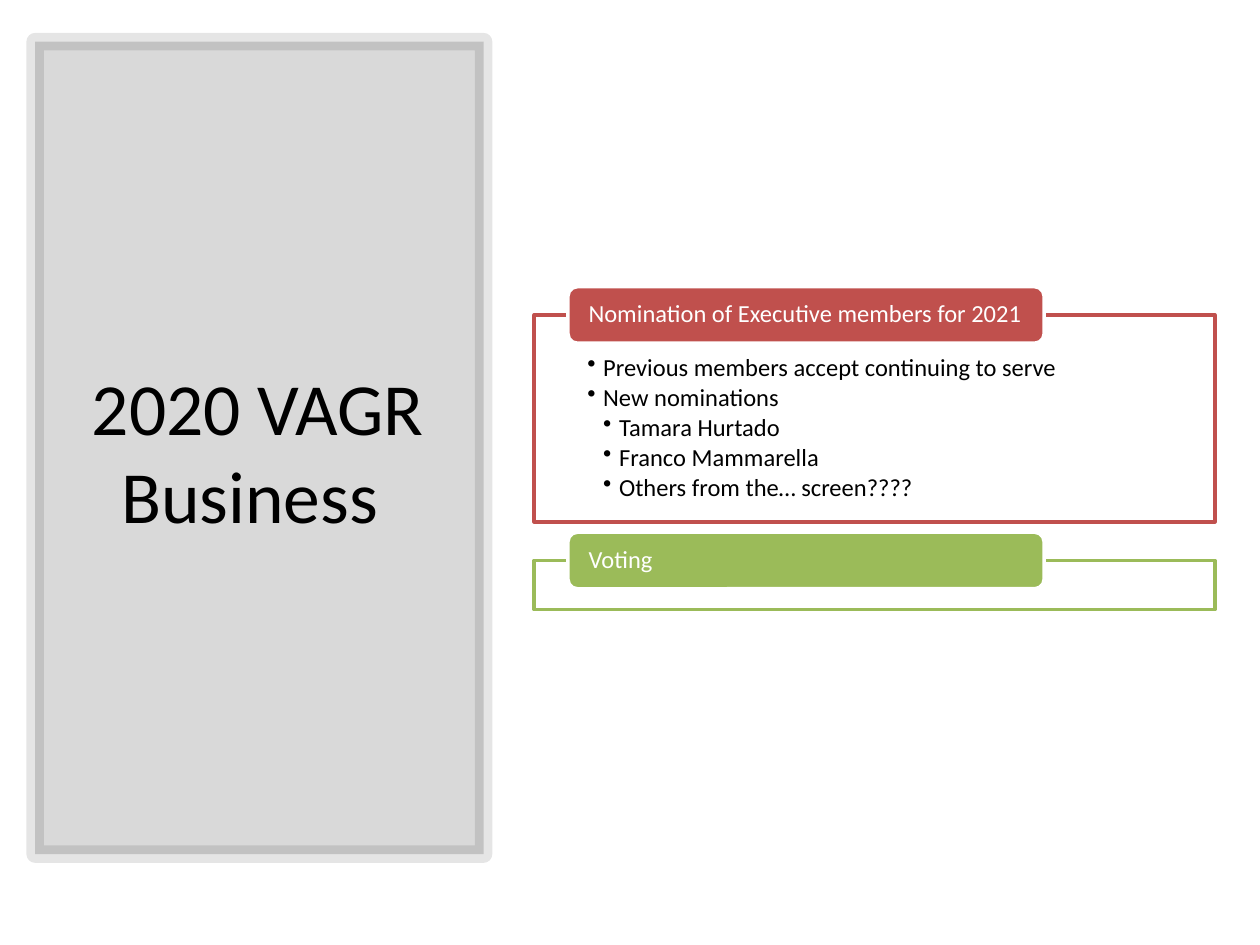
"""Build a slide with a title panel and two tabbed agenda boxes."""
import pptx
import pptx.dml.color
import pptx.enum.shapes
import pptx.enum.text
import pptx.oxml.xmlchemy
import pptx.util
from lxml import etree
from pptx.oxml.ns import qn

Cm = pptx.util.Cm
Pt = pptx.util.Pt
RGBColor = pptx.dml.color.RGBColor
SHAPE = pptx.enum.shapes.MSO_SHAPE
ALIGN = pptx.enum.text.PP_ALIGN
ANCHOR = pptx.enum.text.MSO_ANCHOR

BLACK = RGBColor(0x00, 0x00, 0x00)
WHITE = RGBColor(0xFF, 0xFF, 0xFF)
RED = RGBColor(0xC0, 0x50, 0x4D)
GREEN = RGBColor(0x9B, 0xBB, 0x59)

AGENDA = [
    ("Nomination of Executive members for 2021", RED, 4.17, [
        ("Previous members accept continuing to serve", 1),
        ("New nominations", 1),
        ("Tamara Hurtado", 2),
        ("Franco Mammarella", 2),
        ("Others from the… screen????", 2),
    ]),
    ("Voting", GREEN, 0.99, []),
]


def set_alpha(fill_parent, percent):
    color = fill_parent.find(qn("a:solidFill"))[0]
    etree.SubElement(color, qn("a:alpha")).set("val", str(percent * 1000))


def add_text(tf, text, *, font="Calibri", size=14, color=BLACK, align=ALIGN.LEFT,
             spacing=None, after=0, bullet_level=0):
    p = tf.paragraphs[0] if not tf.text else tf.add_paragraph()
    p.alignment = align
    p.line_spacing = spacing
    p.space_after = Pt(after)
    if bullet_level:
        p.level = bullet_level
        pPr = p._p.get_or_add_pPr()
        pPr.set("marL", str(Cm(0.32 * bullet_level)))
        pPr.set("indent", str(-Cm(0.32)))
        etree.SubElement(pPr, qn("a:buChar")).set("char", "•")
    r = p.add_run()
    r.text = text
    r.font.name = font
    r.font.size = Pt(size)
    r.font.color.rgb = color


class SlideBuilder:
    """Hold the slide and its style, with a method for each kind of element."""

    frame_left, frame_width = 10.77, 13.72
    tab_left, tab_width, tab_height = 11.45, 9.6, 1.14

    def __init__(self, slide):
        self.slide = slide

    def box(self, kind, left, top, width, height, fill, line, weight):
        sp = self.slide.shapes.add_shape(
            kind, Cm(left), Cm(top), Cm(width), Cm(height))
        sp.shadow.inherit = False
        sp.fill.solid()
        sp.fill.fore_color.rgb = fill
        sp.line.color.rgb = line
        sp.line.width = Pt(weight)
        return sp

    def text_area(self, sp, insets, anchor):
        tf = sp.text_frame
        tf.word_wrap = True
        tf.vertical_anchor = anchor
        (tf.margin_left, tf.margin_top,
         tf.margin_right, tf.margin_bottom) = map(Cm, insets)
        return tf

    def panel(self, left, top, width, height):
        sp = self.box(SHAPE.RECTANGLE, left, top, width, height, BLACK, BLACK, 10)
        set_alpha(sp._element.spPr, 15)
        ln = sp.line._get_or_add_ln()
        set_alpha(ln, 10)
        etree.SubElement(ln, qn("a:round"))

    def title(self, text, left, top, width, height):
        sp = self.slide.shapes.add_textbox(Cm(left), Cm(top), Cm(width), Cm(height))
        tf = self.text_area(sp, (0.25, 0.13, 0.25, 0.13), ANCHOR.MIDDLE)
        add_text(tf, text, size=42, align=ALIGN.CENTER)

    def frame(self, top, height, color, items):
        sp = self.box(SHAPE.RECTANGLE, self.frame_left, top, self.frame_width,
                      height, WHITE, color, 2)
        set_alpha(sp._element.spPr, 90)
        tf = self.text_area(sp, (1.07, 0.81, 1.07, 0.28), ANCHOR.TOP)
        for text, level in items:
            add_text(tf, text, spacing=0.9, after=2, bullet_level=level)

    def tab(self, text, frame_top, color):
        sp = self.box(SHAPE.ROUNDED_RECTANGLE, self.tab_left,
                      frame_top - self.tab_height / 2, self.tab_width,
                      self.tab_height, color, WHITE, 2)
        tf = self.text_area(sp, (0.36, 0, 0.36, 0), ANCHOR.MIDDLE)
        add_text(tf, text, color=WHITE, spacing=0.9)


def main():
    prs = pptx.Presentation()
    prs.slide_width, prs.slide_height = Cm(25.4), Cm(19.05)
    s = SlideBuilder(prs.slides.add_slide(prs.slide_layouts[6]))
    s.panel(0.71, 0.84, 9.04, 16.38)
    s.title("2020 VAGR Business ", 1.24, 1.78, 7.92, 14.6)
    top, gap = 6.35, 0.78
    for heading, color, height, items in AGENDA:
        s.frame(top, height, color, items)
        s.tab(heading, top, color)
        top += height + gap
    prs.save("out.pptx")


if __name__ == "__main__":
    main()
